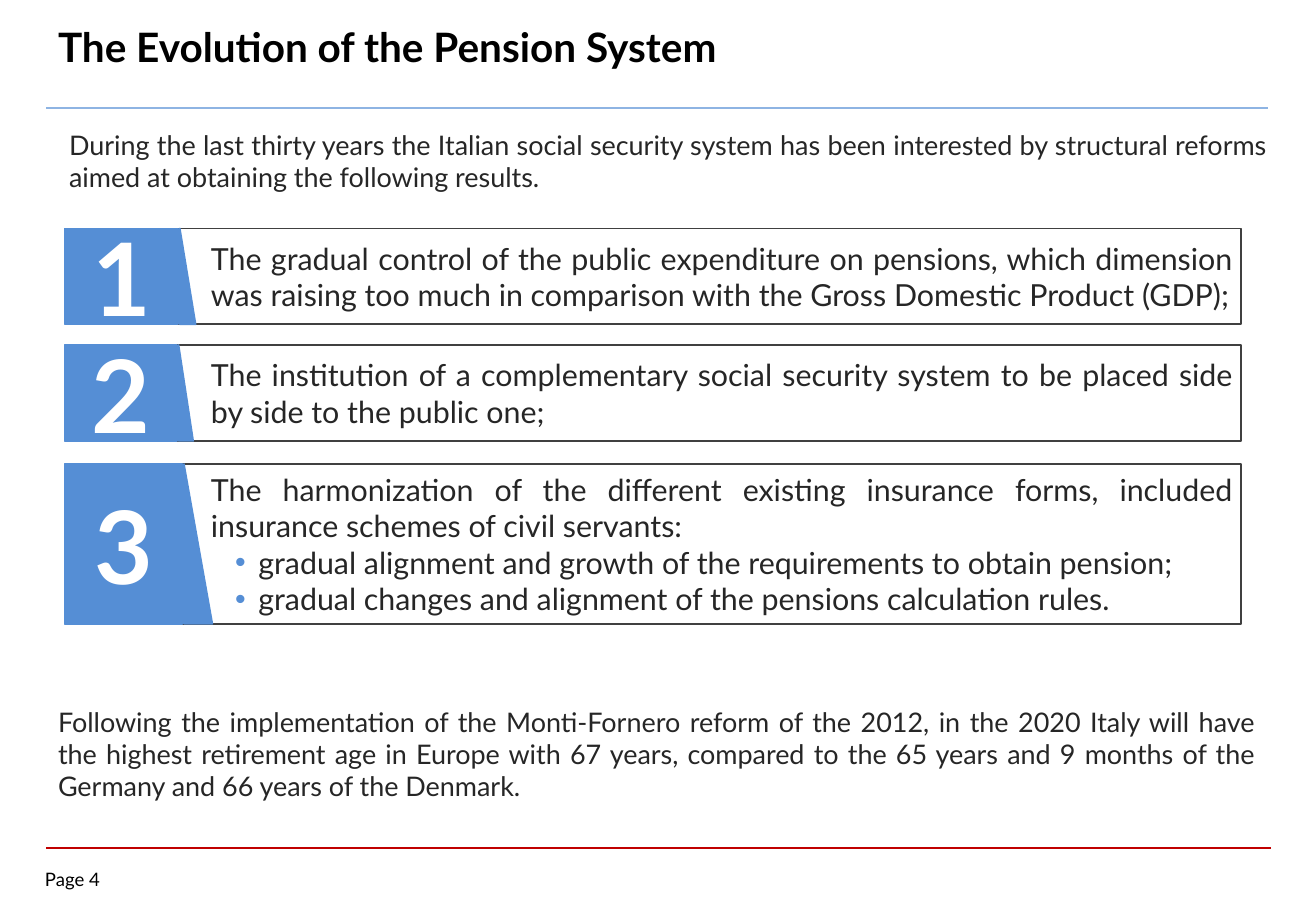
"""Build the pension system slide on a grid of 100 columns by 100 rows."""
from lxml import etree
from pptx import Presentation, util as u
from pptx.dml.color import RGBColor
from pptx.enum import shapes, text
from pptx.oxml.ns import qn

WIDTH, HEIGHT = u.Inches(10.83), u.Inches(7.5)
FONT = "Lato"
COLORS = {"black": "000000", "body": "262626", "border": "404040", "white": "FFFFFF",
          "blue": "558ED5", "sky": "8EB4E3", "red": "C00000"}
BADGE_LEFT, FRAME_LEFT, FRAME_WIDTH = 4.9, 12.19, 82.14
TEXT_LEFT, TEXT_WIDTH, SEAM = 15.12, 79.5, 0.12
ALIGN = text.PP_ALIGN

CARDS = [
    (25.07, 10.53, 8.65, 1.2,
     "The gradual control of the public expenditure on pensions, which dimension "
     "was raising too much in comparison with the Gross Domestic Product (GDP);", []),
    (37.87, 10.53, 8.55, 1.11,
     "The institution of a complementary social security system to be placed side "
     "by side to the public one;", []),
    (50.93, 17.55, 8.96, 2.16,
     "The harmonization of the different existing insurance forms, included "
     "insurance schemes of civil servants:",
     ["gradual alignment and growth of the requirements to obtain pension;",
      "gradual changes and alignment of the pensions calculation rules."]),
]
INTRO = ("During the last thirty years the Italian social security system has been interested "
         "by structural reforms aimed at obtaining the following results.")
OUTLOOK = ("Following the implementation of the Monti-Fornero reform of the 2012, in the 2020 Italy "
           "will have the highest retirement age in Europe with 67 years, compared to the 65 years "
           "and 9 months of the Germany and 66 years of the Denmark.")


def color(name):
    return RGBColor.from_string(COLORS[name])


def grid(x, y):
    return round(WIDTH * x / 100), round(HEIGHT * y / 100)


def style(p, size, ink, bold=False, align=ALIGN.LEFT):
    p.alignment = align
    for r in p.runs:
        r.font.name, r.font.size, r.font.bold = FONT, u.Pt(size), bold
        r.font.color.rgb = color(ink)


def add_bullet(p):
    pPr = p._p.get_or_add_pPr()
    pPr.set("marL", str(u.Inches(0.39)))
    pPr.set("indent", str(u.Inches(-0.19)))
    clr = etree.SubElement(pPr, qn("a:buClr"))
    etree.SubElement(clr, qn("a:srgbClr"), val=COLORS["blue"])
    etree.SubElement(pPr, qn("a:buFont"), typeface="Arial")
    etree.SubElement(pPr, qn("a:buChar"), char="•")


def add_text(s, x, y, w, h, content, size, ink="body", bold=False, align=ALIGN.JUSTIFY,
             anchor=text.MSO_ANCHOR.TOP, bullets=()):
    tf = s.shapes.add_textbox(*grid(x, y), *grid(w, h)).text_frame
    tf.word_wrap, tf.vertical_anchor = True, anchor
    tf.text = content
    style(tf.paragraphs[0], size, ink, bold, align)
    for item in bullets:
        p = tf.add_paragraph()
        add_bullet(p)
        p.text = item
        style(p, size, ink, bold, align)
    return tf


def add_block(s, kind, x, y, w, h, line, fill=None):
    sp = s.shapes.add_shape(kind, *grid(x, y), *grid(w, h))
    sp.shadow.inherit = False
    sp.line.color.rgb, sp.line.width = color(line), u.Pt(1)
    if fill:
        sp.fill.solid()
        sp.fill.fore_color.rgb = color(fill)
    else:
        sp.fill.background()
    return sp


def add_rule(s, left, right, y, ink, width):
    line = s.shapes.add_connector(shapes.MSO_CONNECTOR.STRAIGHT, *grid(left, y), *grid(right, y))
    line.line.color.rgb, line.line.width = color(ink), u.Pt(width)
    etree.SubElement(line._element.spPr, qn("a:effectLst"))


def add_card(s, number, top, height, badge_width, slant, content, bullets):
    kind = shapes.MSO_SHAPE
    add_block(s, kind.RECTANGLE, FRAME_LEFT, top, FRAME_WIDTH, height, "border")
    badge = add_block(s, kind.RECTANGLE, BADGE_LEFT, top, badge_width, height, "blue", "blue")
    add_block(s, kind.RIGHT_TRIANGLE, BADGE_LEFT + badge_width + SEAM, top, slant, height,
              "blue", "blue")
    tf = badge.text_frame
    tf.word_wrap, tf.vertical_anchor = True, text.MSO_ANCHOR.MIDDLE
    tf.text = str(number)
    style(tf.paragraphs[0], 60, "white", True, ALIGN.CENTER)
    add_text(s, TEXT_LEFT, top, TEXT_WIDTH, height, content, 18,
             anchor=text.MSO_ANCHOR.MIDDLE, bullets=bullets)


def main():
    prs = Presentation()
    prs.slide_width, prs.slide_height = WIDTH, HEIGHT
    s = prs.slides.add_slide(prs.slide_layouts[6])
    add_rule(s, 3.5, 96.55, 93.07, "red", 1)
    add_rule(s, 3.5, 96.35, 11.85, "sky", 1.5)
    add_text(s, 3.5, 1.73, 69.8, 9.47, "The Evolution of the Pension System", 24, "black",
             True, ALIGN.LEFT)
    add_text(s, 4.34, 13.42, 92.9, 8.53, INTRO, 16)
    for number, card in enumerate(CARDS, 1):
        add_card(s, number, *card)
    add_text(s, 3.5, 76.75, 92.85, 8.53, OUTLOOK, 16)
    page = add_text(s, 3.42, 95.25, 6.74, 2.93, "Page 4", 11, "black", align=ALIGN.LEFT)
    page.margin_left = page.margin_right = page.margin_top = page.margin_bottom = 0
    prs.save("out.pptx")


if __name__ == "__main__":
    main()
